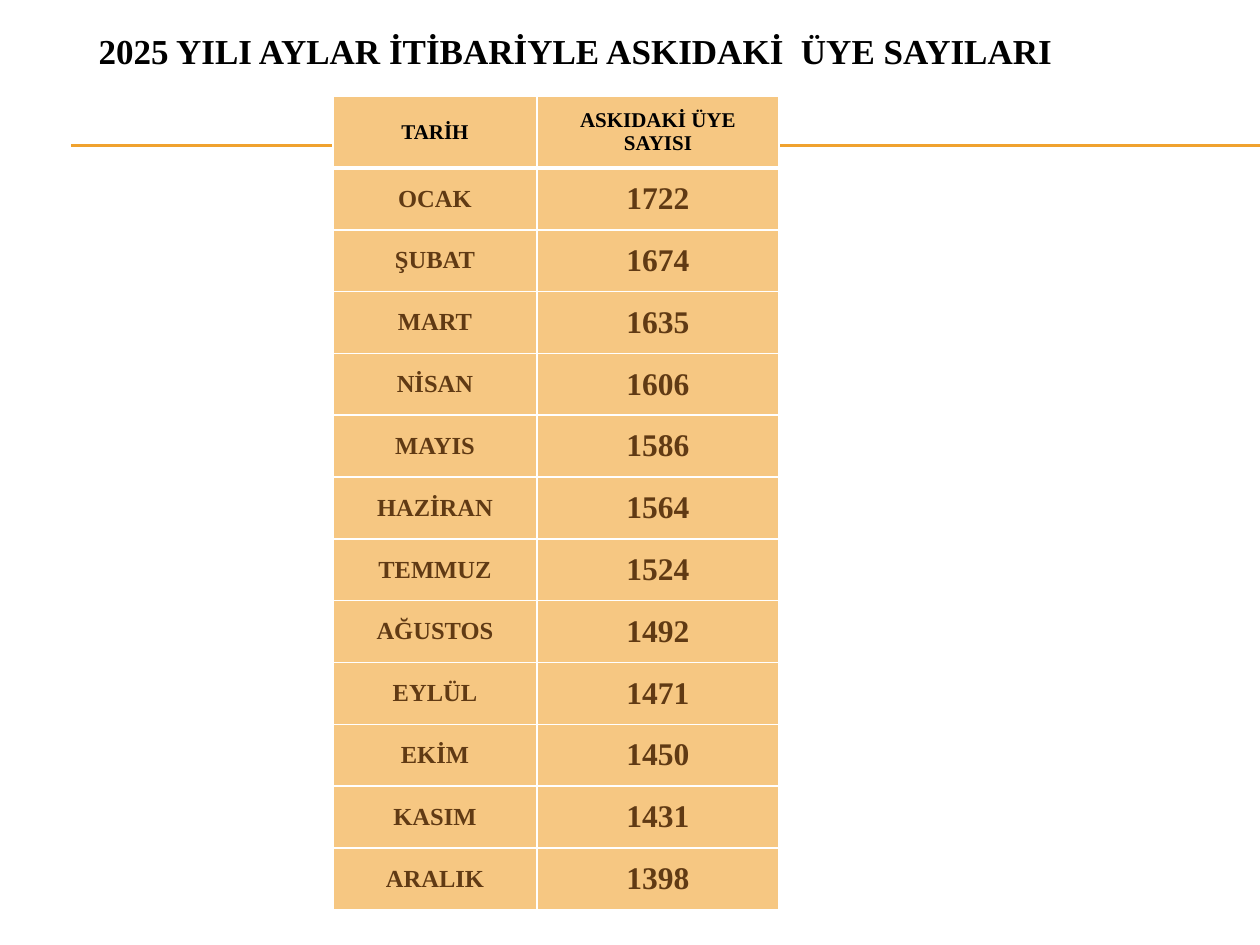
from lxml.etree import SubElement
from pptx import Presentation
from pptx.dml.color import RGBColor
from pptx.enum.shapes import MSO_CONNECTOR
from pptx.enum.text import MSO_ANCHOR, PP_ALIGN
from pptx.oxml.ns import qn
from pptx.util import Emu, Pt

FONT = "Times New Roman"
BLACK = RGBColor(0x00, 0x00, 0x00)
WHITE = RGBColor(0xFF, 0xFF, 0xFF)
BROWN = RGBColor(0x60, 0x3A, 0x14)
SAND = RGBColor(0xF6, 0xC7, 0x82)
AMBER = RGBColor(0xF0, 0xA2, 0x2E)

MEMBERS = [
    ("TARİH", "ASKIDAKİ ÜYE SAYISI"),
    ("OCAK", 1722),
    ("ŞUBAT", 1674),
    ("MART", 1635),
    ("NİSAN", 1606),
    ("MAYIS", 1586),
    ("HAZİRAN", 1564),
    ("TEMMUZ", 1524),
    ("AĞUSTOS", 1492),
    ("EYLÜL", 1471),
    ("EKİM", 1450),
    ("KASIM", 1431),
    ("ARALIK", 1398),
]


def px(length):
    """Turn pixels, 126 to the inch, into EMU."""
    return Emu(round(length * 914400 / 126))


def write(frame, text, size, color):
    """Put one bold centred line of text in a text frame."""
    paragraph = frame.paragraphs[0]
    paragraph.text = text
    paragraph.alignment = PP_ALIGN.CENTER
    paragraph.font.name = FONT
    paragraph.font.size = Pt(size)
    paragraph.font.bold = True
    paragraph.font.color.rgb = color


prs = Presentation()
prs.slide_width, prs.slide_height = px(1260), px(945)
slide = prs.slides.add_slide(prs.slide_layouts[6])

# Double rule behind the table
for y in (145, 146):
    rule = slide.shapes.add_connector(MSO_CONNECTOR.STRAIGHT, px(71), px(y), px(1260), px(y))
    rule.line.color.rgb = AMBER
    rule.line.width = Pt(0.75)
    SubElement(rule._element.spPr, qn("a:effectLst"))

# Monthly table
header_height, body_height = px(72), px(742)
table = slide.shapes.add_table(
    len(MEMBERS), 2, px(333), px(96), px(446), header_height + body_height
).table
table.columns[0].width = px(204)
table.columns[1].width = px(242)

for r, record in enumerate(MEMBERS):
    is_header = r == 0
    table.rows[r].height = header_height if is_header else body_height // (len(MEMBERS) - 1)
    borders = {"L": 1, "R": 1, "T": 3 if r == 1 else 1, "B": 3 if is_header else 1}
    for c, value in enumerate(record):
        cell = table.cell(r, c)
        cell.vertical_anchor = MSO_ANCHOR.MIDDLE
        size = 12 if is_header else (14, 18)[c]
        write(cell.text_frame, str(value), size, BLACK if is_header else BROWN)
        for side, width in borders.items():
            border = SubElement(cell._tc.tcPr, qn(f"a:ln{side}"), w=str(Pt(width)))
            SubElement(SubElement(border, qn("a:solidFill")), qn("a:srgbClr"), val=str(WHITE))
        cell.fill.solid()
        cell.fill.fore_color.rgb = SAND

# Title
title = slide.shapes.add_textbox(px(35), px(6), px(1081), px(90)).text_frame
title.word_wrap = True
title.vertical_anchor = MSO_ANCHOR.MIDDLE
write(title, "2025 YILI AYLAR İTİBARİYLE ASKIDAKİ  ÜYE SAYILARI", 20, BLACK)

prs.save("out.pptx")
